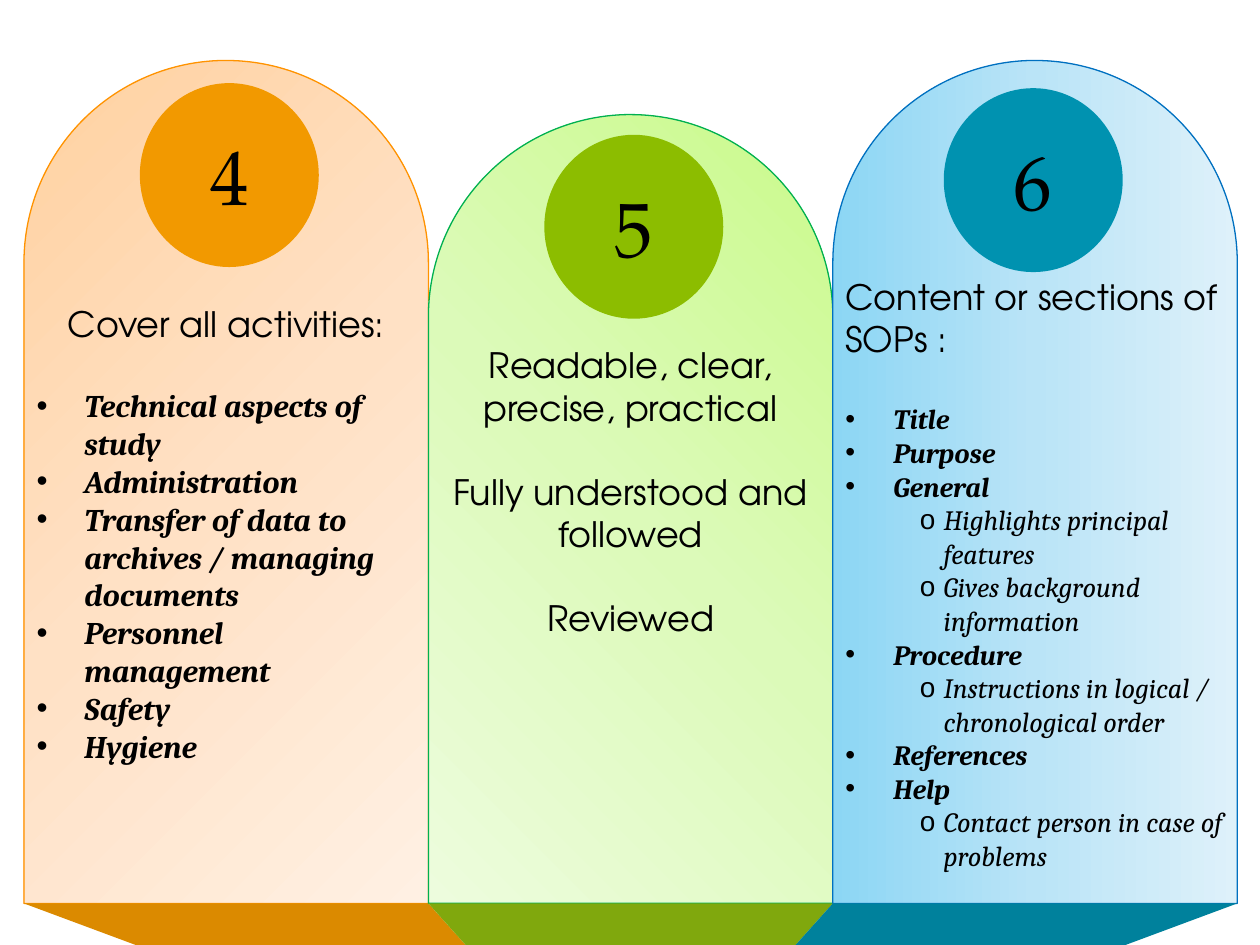
from dataclasses import dataclass

from lxml.etree import SubElement
from pptx import Presentation
from pptx.dml.color import RGBColor
from pptx.enum.shapes import MSO_SHAPE
from pptx.enum.text import MSO_ANCHOR, MSO_AUTO_SIZE, PP_ALIGN
from pptx.oxml import parse_xml
from pptx.oxml.ns import nsdecls, qn
from pptx.util import Inches, Pt


@dataclass(frozen=True)
class Theme:
    text: str = "000000"
    heading_font: str = "TeX Gyre Adventor"
    number_font: str = "TeX Gyre Pagella"
    list_font: str = "Cambria"
    heading_size: int = 20
    number_size: int = 44
    blank_line: int = 24


@dataclass(frozen=True)
class Column:
    number: str
    arch_top: float
    badge_offset: tuple
    text_top: float
    text_height: float
    outline: str
    badge: str
    band: str
    gradient: tuple
    direction: str
    headings: tuple
    items: tuple = ()
    item_size: int = 18
    align: PP_ALIGN = PP_ALIGN.CENTER


THEME = Theme()

# Grid in inches: three equal columns on a common base line
GRID_LEFT, COLUMN_WIDTH, BASE = 0.19, 3.21, 7.17
BAND_LEFT, BAND_WIDTH, BAND_BOTTOM = 1.75, 2.17, 7.75
BADGE_WIDTH, BADGE_HEIGHT = 1.42, 1.46

COLUMNS = (
    Column("4", 0.48, (0.92, 0.18), 2.35, 3.8, "FF9300", "F29900", "DB8A00",
           ("FFD1A0", "FFE1C5", "FFF0E3"), '<a:lin ang="2700000" scaled="0"/>',
           ("Cover all activities:",),
           ((0, "Technical aspects of study"),
            (0, "Administration"),
            (0, "Transfer of data to archives / managing documents"),
            (0, "Personnel management"),
            (0, "Safety"),
            (0, "Hygiene"))),
    Column("5", 0.91, (0.92, 0.16), 2.68, 2.46, "00B050", "8CBD00", "80A80D",
           ("CAFA8B", "DCFAB9", "EDFCDD"),
           '<a:path path="circle"><a:fillToRect l="100000" b="100000"/></a:path>',
           ("Readable, clear, precise, practical",
            "Fully understood and followed",
            "Reviewed")),
    Column("6", 0.48, (0.88, 0.22), 2.14, 4.88, "0070C0", "0092B0", "00819C",
           ("8CD6F4", "BAE4F7", "DEF1FA"), '<a:lin ang="0" scaled="0"/>',
           ("Content or sections of SOPs :",),
           ((0, "Title"),
            (0, "Purpose"),
            (0, "General"),
            (1, "Highlights principal features"),
            (1, "Gives background information"),
            (0, "Procedure"),
            (1, "Instructions in logical / chronological order"),
            (0, "References"),
            (0, "Help"),
            (1, "Contact person in case of problems")),
           item_size=16, align=PP_ALIGN.LEFT),
)


def fill_solid(shape, color):
    shape.shadow.inherit = False
    shape.fill.solid()
    shape.fill.fore_color.rgb = RGBColor.from_string(color)
    shape.line.fill.background()


def fill_gradient(shape, colors, direction):
    stops = "".join(
        f'<a:gs pos="{index * 50000}"><a:srgbClr val="{color}"/></a:gs>'
        for index, color in enumerate(colors))
    gradient = parse_xml(f'<a:gradFill {nsdecls("a")} rotWithShape="1">'
                         f'<a:gsLst>{stops}</a:gsLst>{direction}</a:gradFill>')
    properties = shape.element.spPr
    properties.replace(properties.find(qn("a:solidFill")), gradient)


def format_paragraph(paragraph, font_name, size, bold=False, italic=False):
    font = paragraph.font
    font.name, font.size, font.bold, font.italic = font_name, Pt(size), bold, italic
    font.color.rgb = RGBColor.from_string(THEME.text)
    paragraph.line_spacing = 1.0
    paragraph.space_before = paragraph.space_after = Pt(0)


def set_bullet(paragraph, character=None, margin=0, hanging=0):
    properties = paragraph._p.get_or_add_pPr()
    properties.set("marL", str(Inches(margin)))
    properties.set("indent", str(Inches(-hanging)))
    if character:
        bullet = SubElement(properties, qn("a:buChar"))
        bullet.set("char", character)
    else:
        bullet = SubElement(properties, qn("a:buNone"))
    # Bullets come before the default run properties
    defaults = properties.find(qn("a:defRPr"))
    if defaults is not None:
        defaults.addprevious(bullet)


def add_arch(slide, column, left):
    """Arch with its numbered badge, standing on the base line."""
    arch = slide.shapes.add_shape(
        MSO_SHAPE.ROUND_2_SAME_RECTANGLE, Inches(left), Inches(column.arch_top),
        Inches(COLUMN_WIDTH), Inches(BASE - column.arch_top))
    arch.adjustments[0] = 0.5
    fill_solid(arch, column.gradient[0])
    fill_gradient(arch, column.gradient, column.direction)
    arch.line.color.rgb = RGBColor.from_string(column.outline)
    arch.line.width = Pt(0.75)

    offset_x, offset_y = column.badge_offset
    badge = slide.shapes.add_shape(
        MSO_SHAPE.OVAL, Inches(left + offset_x), Inches(column.arch_top + offset_y),
        Inches(BADGE_WIDTH), Inches(BADGE_HEIGHT))
    fill_solid(badge, column.badge)
    badge.text_frame.text = column.number
    paragraph = badge.text_frame.paragraphs[0]
    paragraph.alignment = PP_ALIGN.CENTER
    format_paragraph(paragraph, THEME.number_font, THEME.number_size)


def add_band(slide, color, left, bottom_left):
    """Slanted floor under one arch."""
    points = [(Inches(x), Inches(y)) for x, y in (
        (left, BASE), (left + COLUMN_WIDTH, BASE),
        (bottom_left + BAND_WIDTH, BAND_BOTTOM), (bottom_left, BAND_BOTTOM))]
    builder = slide.shapes.build_freeform(*points[0])
    builder.add_line_segments(points[1:], close=True)
    fill_solid(builder.convert_to_shape(), color)


def fill_text(placeholder, column, left):
    """Headings and bulleted list of one column."""
    placeholder.left, placeholder.top = Inches(left), Inches(column.text_top)
    placeholder.width, placeholder.height = Inches(COLUMN_WIDTH), Inches(column.text_height)
    frame = placeholder.text_frame
    frame.word_wrap = True
    frame.auto_size = MSO_AUTO_SIZE.NONE
    frame.vertical_anchor = MSO_ANCHOR.TOP
    frame.text = "\n".join(column.headings + tuple(text for _, text in column.items))

    count = len(column.headings)
    for paragraph in frame.paragraphs[:count]:
        format_paragraph(paragraph, THEME.heading_font, THEME.heading_size)
        paragraph.alignment = column.align
        paragraph.space_after = Pt(THEME.blank_line)
        set_bullet(paragraph)
    for paragraph, (level, _) in zip(frame.paragraphs[count:], column.items):
        paragraph.level = level
        paragraph.alignment = PP_ALIGN.LEFT
        format_paragraph(paragraph, THEME.list_font, column.item_size,
                         bold=level == 0, italic=True)
        set_bullet(paragraph, *(("•", 0.38, 0.38), ("o", 0.78, 0.19))[level])
    # Bring the text in front of the arches
    placeholder.element.getparent().append(placeholder.element)


def build_slide(presentation):
    slide = presentation.slides.add_slide(presentation.slide_layouts.get_by_name("Comparison"))
    title, *bodies = list(slide.placeholders)
    for unused in [title] + bodies[len(COLUMNS):]:
        unused.element.getparent().remove(unused.element)

    for index, (column, body) in enumerate(zip(COLUMNS, bodies)):
        left = GRID_LEFT + index * COLUMN_WIDTH
        add_arch(slide, column, left)
        add_band(slide, column.band, left, BAND_LEFT + index * BAND_WIDTH)
        fill_text(body, column, left)


def main():
    presentation = Presentation()
    presentation.slide_width, presentation.slide_height = Inches(10), Inches(7.5)
    build_slide(presentation)
    presentation.save("out.pptx")


if __name__ == "__main__":
    main()
